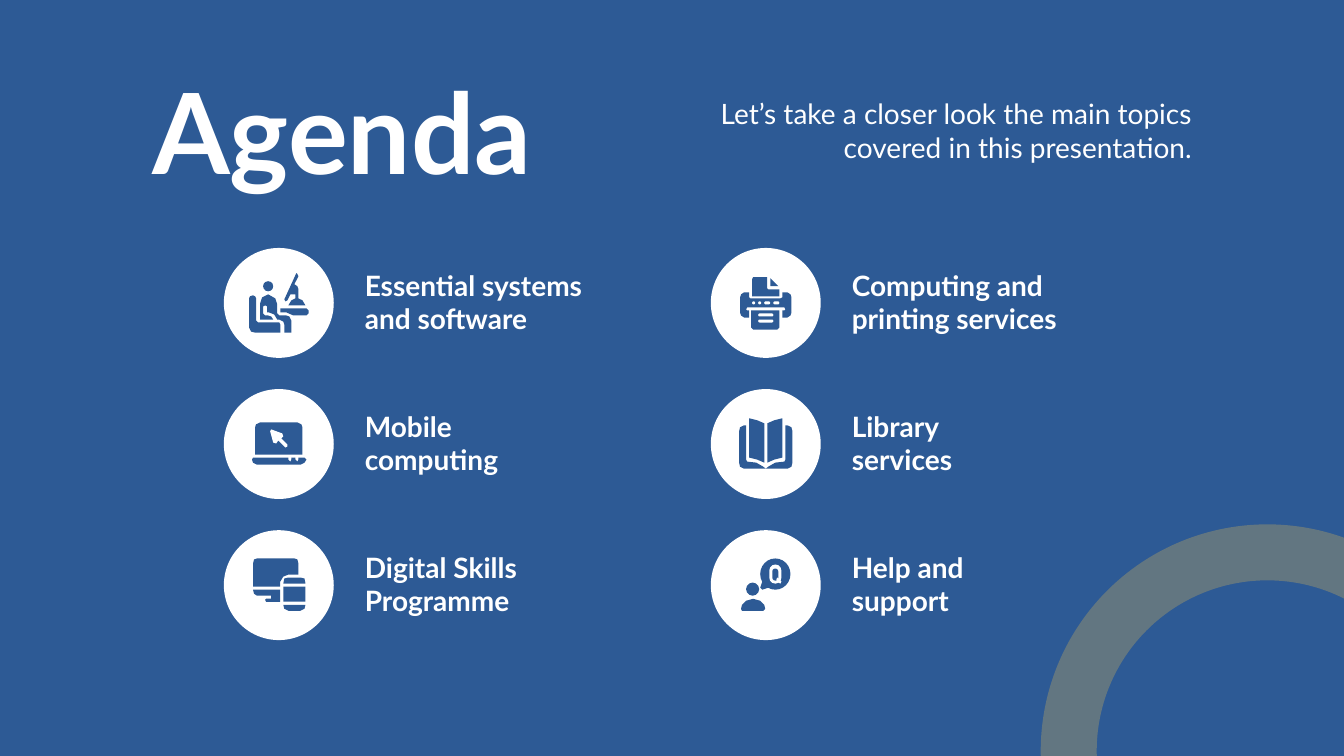
from pptx import Presentation
from pptx.dml.color import RGBColor
from pptx.enum.shapes import MSO_SHAPE
from pptx.enum.text import MSO_ANCHOR, PP_ALIGN
from pptx.oxml.ns import qn
from pptx.util import Inches, Pt
from lxml.etree import SubElement

BLUE = RGBColor(0x2D, 0x5A, 0x95)
WHITE = RGBColor(0xFF, 0xFF, 0xFF)
YELLOW = RGBColor(0xFA, 0xC7, 0x48)
FONT = "Lato"

GRID_LEFT, GRID_TOP = 2.22, 2.46
COLUMN_PITCH, ROW_PITCH = 4.83, 1.4
BADGE_SIZE = 1.09
LABEL_OFFSET_X, LABEL_OFFSET_Y, LABEL_HEIGHT = 1.3, 0.15, 0.77

# Icon parts are in hundredths of an inch from the badge's top left corner.
OUTLINE = None
DISC = MSO_SHAPE.OVAL
PILL = MSO_SHAPE.ROUNDED_RECTANGLE
BLOCK = MSO_SHAPE.RECTANGLE


def mirrored(points, axis=54.5):
    return [(2 * axis - x, y) for x, y in points]


DESK_WORKER = [
    (OUTLINE, BLUE, [(72, 25), (71, 27), (60, 51), (61, 53), (63, 52), (66, 46), (71, 46),
                     (71, 50), (67, 52), (64, 57), (81, 57), (78, 52), (74, 50), (74, 41),
                     (73, 38), (70, 36), (74, 28), (73, 26)]),
    (OUTLINE, BLUE, [(29, 47), (26, 48), (25, 50), (25, 79), (27, 83), (31, 84), (56, 84),
                     (56, 76), (55, 74), (34, 74), (32, 72), (32, 50), (31, 48)]),
    (DISC, BLUE, (39, 33, 10, 10)),
    (OUTLINE, BLUE, [(44, 46), (38, 49), (36, 55), (36, 71), (49, 71), (47, 68), (44, 67),
                     (41, 67), (39, 65), (39, 58), (41, 57), (43, 58), (43, 64), (45, 64),
                     (50, 66), (53, 71), (55, 71), (59, 73), (60, 76), (60, 84), (67, 84),
                     (67, 72), (65, 68), (62, 67), (55, 67), (53, 65), (53, 56), (51, 50)]),
    (OUTLINE, BLUE, [(56, 60), (56, 64), (62, 64), (69, 67), (82, 67), (84, 65), (84, 62),
                     (82, 60)]),
]

PRINTER = [
    (OUTLINE, BLUE, [(40, 62), (68, 62), (68, 79), (66, 81), (42, 81), (40, 79)]),
    (PILL, WHITE, (47, 65, 15, 3)),
    (PILL, WHITE, (47, 71, 15, 3)),
    (OUTLINE, BLUE, [(59, 30), (59, 38), (67, 38)]),
    (OUTLINE, BLUE, [(33, 44), (30, 46), (29, 49), (29, 64), (30, 67), (33, 69), (38, 69),
                     (38, 62), (36, 62), (35, 61), (36, 59), (73, 59), (74, 61), (73, 62),
                     (71, 62), (71, 69), (76, 69), (79, 67), (80, 64), (80, 49), (79, 46),
                     (76, 44), (71, 44), (71, 49), (69, 50), (39, 50), (38, 49), (38, 44)]),
    (DISC, WHITE, (41, 53, 3, 3)),
    (DISC, WHITE, (47, 53, 3, 3)),
    (PILL, WHITE, (53, 53, 6, 3)),
    (PILL, WHITE, (62, 53, 6, 3)),
    (OUTLINE, BLUE, [(42, 29), (41, 31), (41, 48), (68, 48), (68, 41), (57, 41), (56, 40),
                     (56, 29)]),
]

LAPTOP = [
    (OUTLINE, BLUE, [(29, 68), (28, 70), (29, 73), (33, 75), (76, 75), (80, 73), (82, 70),
                     (80, 68), (74, 68), (74, 70), (73, 72), (71, 70), (71, 68), (67, 68),
                     (67, 70), (66, 72), (64, 70), (64, 68)]),
    (OUTLINE, BLUE, [(36, 33), (32, 35), (31, 38), (31, 65), (78, 65), (78, 38), (77, 35),
                     (73, 33)]),
    (OUTLINE, WHITE, [(47, 40), (58, 44), (59, 47), (57, 49), (63, 55), (63, 57), (61, 58),
                      (54, 51), (52, 54), (49, 53), (46, 42)]),
]

COVER = [(74, 36), (74, 70), (73, 72), (64, 73), (57, 77), (54.5, 79), (76, 79), (80, 77),
         (81, 73), (81, 42), (80, 38), (76, 36)]
PAGE = [(71, 29), (71, 68), (63, 70), (56, 73), (56, 34), (63, 31)]
BOOK = [(OUTLINE, BLUE, points)
        for half in (COVER, PAGE) for points in (half, mirrored(half))]

DEVICES = [
    (BLOCK, BLUE, (59, 56, 22, 15)),
    (OUTLINE, BLUE, [(59, 74), (60, 78), (64, 80), (76, 80), (80, 78), (81, 74)]),
    (OUTLINE, BLUE, [(64, 47), (60, 48), (59, 53), (81, 53), (80, 48), (76, 47)]),
    (OUTLINE, BLUE, [(29, 59), (30, 63), (33, 65), (47, 65), (47, 68), (42, 68), (41, 69),
                     (42, 71), (56, 71), (56, 59)]),
    (OUTLINE, BLUE, [(33, 28), (30, 29), (29, 33), (29, 56), (56, 56), (56, 51), (59, 46),
                     (64, 44), (74, 44), (74, 33), (73, 29), (70, 28)]),
]

QUESTION = [
    (DISC, BLUE, (49, 28, 30, 31)),
    (OUTLINE, BLUE, [(51, 51), (49, 57), (51, 59), (57, 57)]),
    (PILL, WHITE, (58, 34, 12, 19)),
    (PILL, BLUE, (61, 38, 6, 12)),
    (OUTLINE, WHITE, [(66, 47), (70, 51), (69, 53), (67, 52), (65, 49)]),
    (DISC, BLUE, (35, 52, 13, 13)),
    (OUTLINE, BLUE, [(42, 68), (35, 70), (31, 74), (30, 78), (31, 80), (52, 80), (54, 78),
                     (53, 74), (49, 70)]),
]

# Column, row, icon, label width and label lines.
TOPICS = [
    (0, 0, DESK_WORKER, 3.07, ["Essential systems", "and software"]),
    (1, 0, PRINTER, 2.77, ["Computing and", "printing services"]),
    (0, 1, LAPTOP, 2.47, ["Mobile", "computing"]),
    (1, 1, BOOK, 1.82, ["Library", "services"]),
    (0, 2, DEVICES, 2.74, ["Digital Skills Programme"]),
    (1, 2, QUESTION, 2.74, ["Help and", "support"]),
]


def write_text(box, lines, size, bold=False, align=PP_ALIGN.LEFT):
    frame = box.text_frame
    frame.word_wrap = True
    frame.vertical_anchor = MSO_ANCHOR.TOP
    for index, line in enumerate(lines):
        para = frame.add_paragraph() if index else frame.paragraphs[0]
        para.alignment = align
        span = para.add_run()
        span.text = line
        span.font.name = FONT
        span.font.size = Pt(size)
        span.font.bold = bold
        span.font.color.rgb = WHITE


def paint(shape, colour):
    shape.shadow.inherit = False
    shape.fill.solid()
    shape.fill.fore_color.rgb = colour
    shape.line.fill.background()


def add_preset(shapes, preset, left, top, width, height, colour):
    shape = shapes.add_shape(preset, Inches(left), Inches(top), Inches(width), Inches(height))
    if preset == PILL:
        shape.adjustments[0] = 0.5
    paint(shape, colour)


def add_outline(shapes, left, top, points, colour):
    corners = [(Inches(left + x / 100), Inches(top + y / 100)) for x, y in points]
    builder = shapes.build_freeform(*corners[0], scale=1.0)
    builder.add_line_segments(corners[1:], close=True)
    paint(builder.convert_to_shape(), colour)


def add_icon(shapes, left, top, parts):
    for preset, colour, geometry in parts:
        if preset is OUTLINE:
            add_outline(shapes, left, top, geometry, colour)
        else:
            x, y, width, height = (value / 100 for value in geometry)
            add_preset(shapes, preset, left + x, top + y, width, height, colour)


def add_topic(shapes, column, row, icon, label_width, lines):
    left = GRID_LEFT + column * COLUMN_PITCH
    top = GRID_TOP + row * ROW_PITCH
    add_preset(shapes, DISC, left, top, BADGE_SIZE, BADGE_SIZE, WHITE)
    add_icon(shapes, left, top, icon)
    label = shapes.add_textbox(Inches(left + LABEL_OFFSET_X), Inches(top + LABEL_OFFSET_Y),
                               Inches(label_width), Inches(LABEL_HEIGHT))
    write_text(label, lines, 20, bold=True)


def add_corner_ring(page):
    ring = page.shapes.add_shape(DISC, Inches(10.6), Inches(5.48), Inches(3.94), Inches(3.94))
    ring.shadow.inherit = False
    ring.fill.background()
    ring.line.width = Pt(40)
    ring.line.color.rgb = YELLOW
    colour = ring.line._get_or_add_ln().find(".//" + qn("a:srgbClr"))
    SubElement(colour, qn("a:alpha")).set("val", "25000")


def main():
    deck = Presentation()
    deck.slide_width, deck.slide_height = Inches(13.33), Inches(7.5)
    page = deck.slides.add_slide(deck.slide_layouts[5])
    page.background.fill.solid()
    page.background.fill.fore_color.rgb = BLUE

    title = page.shapes.title
    title.left, title.top = Inches(1.41), Inches(0.57)
    title.width, title.height = Inches(5.1), Inches(1.45)
    write_text(title, ["Agenda"], 80, bold=True)

    intro = page.shapes.add_textbox(Inches(6.69), Inches(0.91), Inches(5.23), Inches(0.77))
    write_text(intro, ["Let’s take a closer look the main topics covered in this presentation."],
               20, align=PP_ALIGN.RIGHT)

    topics = page.shapes.add_group_shape()
    for topic in TOPICS:
        add_topic(topics.shapes, *topic)
    add_corner_ring(page)
    deck.save("out.pptx")


if __name__ == "__main__":
    main()
